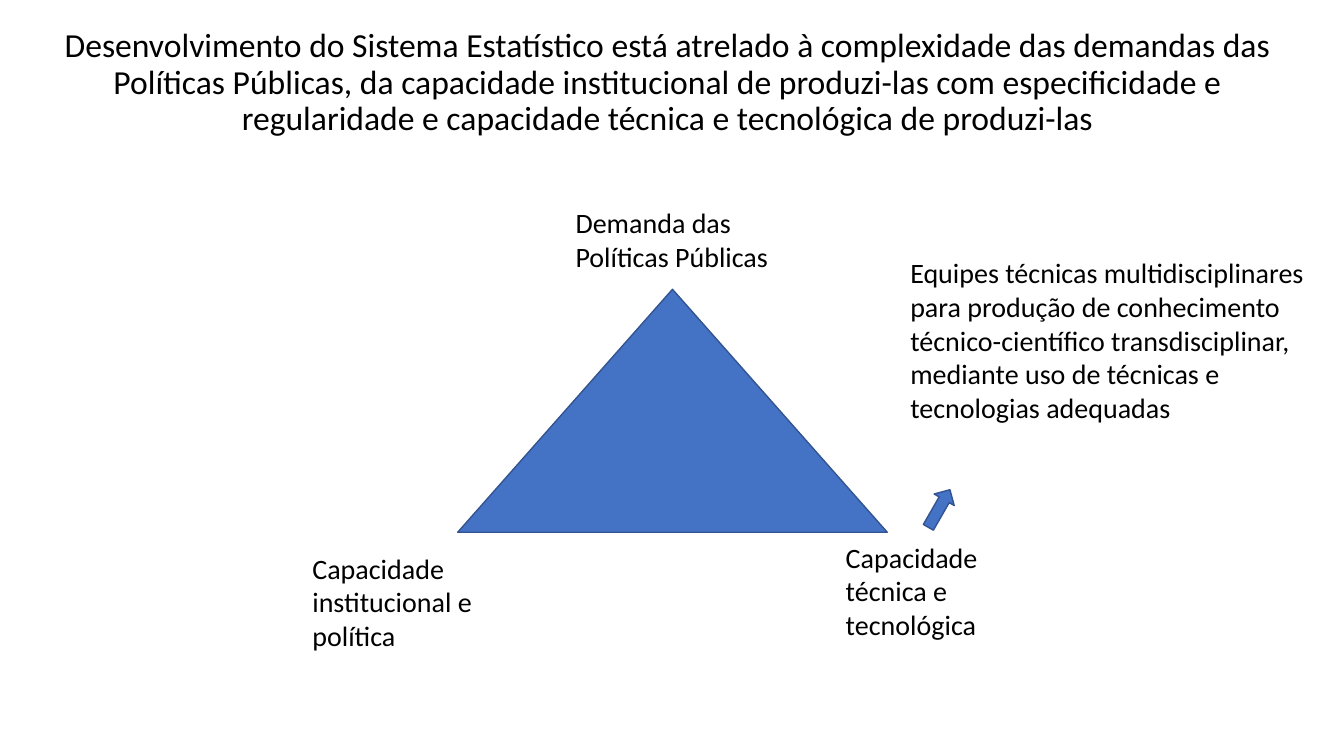
from pptx import Presentation
from pptx.dml.color import RGBColor
from pptx.enum.shapes import MSO_SHAPE as Form
from pptx.enum.text import MSO_ANCHOR as Anchor, MSO_AUTO_SIZE as Fit, PP_ALIGN as Align
from pptx.util import Inches, Pt


def color(code):
    return RGBColor.from_string(code)


class Board:
    font = "Calibri"
    ink = "000000"
    fill = "4472C4"
    edge = "325491"

    def __init__(self, deck):
        self.slide = deck.slides.add_slide(deck.slide_layouts[6])

    def shape(self, form, box, turn=0):
        item = self.slide.shapes.add_shape(form, *map(Inches, box))
        item.shadow.inherit = False
        item.rotation = turn
        item.fill.solid()
        item.fill.fore_color.rgb = color(self.fill)
        item.line.color.rgb = color(self.edge)
        item.line.width = Pt(1)

    def text(self, words, box, size=20):
        frame = self.slide.shapes.add_textbox(*map(Inches, box)).text_frame
        frame.word_wrap = True
        frame.auto_size = Fit.SHAPE_TO_FIT_TEXT
        para = frame.paragraphs[0]
        para.text = words
        para.font.name = self.font
        para.font.size = Pt(size)
        para.font.color.rgb = color(self.ink)
        return frame

    def title(self, words, box):
        frame = self.text(words, box, 24)
        frame.auto_size = Fit.NONE
        frame.vertical_anchor = Anchor.MIDDLE
        para = frame.paragraphs[0]
        para.alignment = Align.CENTER
        para.line_spacing = 0.9


def main():
    deck = Presentation()
    deck.slide_width = Inches(13.33)
    deck.slide_height = Inches(7.5)
    board = Board(deck)
    board.title(
        "Desenvolvimento do Sistema Estatístico está atrelado à complexidade "
        "das demandas das Políticas Públicas, da capacidade institucional de "
        "produzi-las com especificidade e regularidade e capacidade técnica e "
        "tecnológica de produzi-las",
        (0.54, 0.1, 12.16, 1.45),
    )
    board.shape(Form.ISOSCELES_TRIANGLE, (4.54, 2.87, 4.26, 2.41))
    board.text("Demanda das Políticas Públicas", (5.61, 1.99, 2.49, 0.77))
    board.text("Capacidade institucional e política", (3, 5.42, 2.04, 1.11))
    board.text("Capacidade técnica e tecnológica", (8.29, 5.31, 2.04, 1.11))
    board.shape(Form.RIGHT_ARROW, (9.1, 4.93, 0.43, 0.23), 299.8)
    board.text(
        "Equipes técnicas multidisciplinares para produção de conhecimento "
        "técnico-científico transdisciplinar, mediante uso de técnicas e "
        "tecnologias adequadas",
        (8.93, 2.49, 4.16, 1.78),
    )
    deck.save("out.pptx")


if __name__ == "__main__":
    main()
